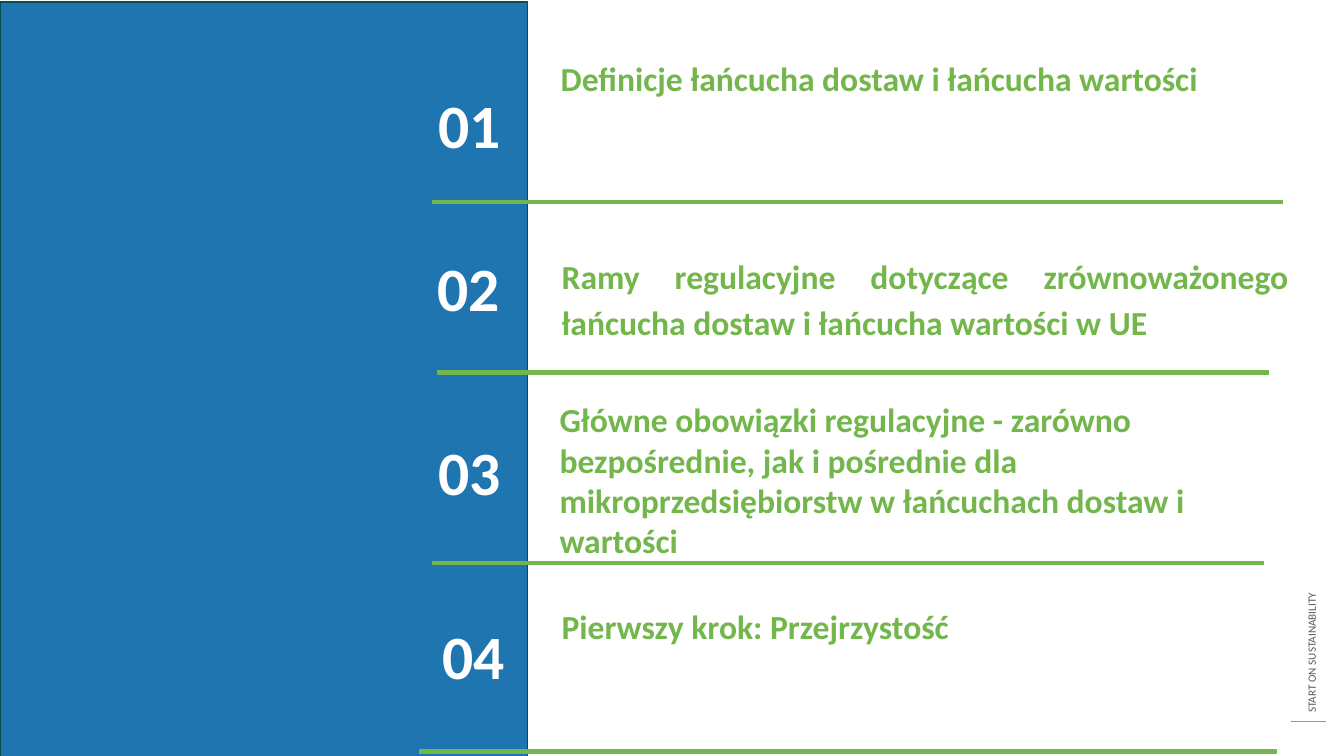
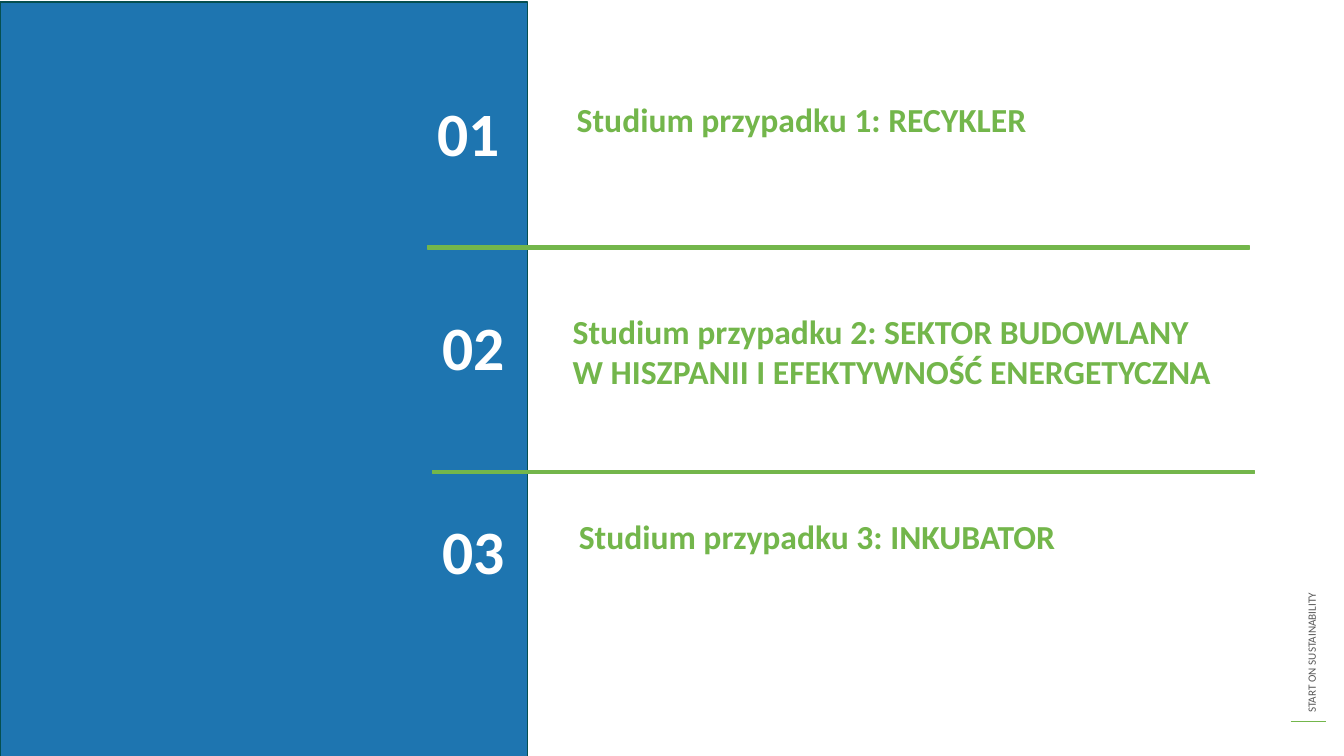
from dataclasses import dataclass

from lxml import etree
from pptx import Presentation
from pptx.dml.color import RGBColor
from pptx.enum.shapes import MSO_CONNECTOR, MSO_SHAPE
from pptx.enum.text import MSO_ANCHOR, MSO_AUTO_SIZE, PP_ALIGN
from pptx.oxml.ns import qn
from pptx.util import Pt

RECTANGLE = MSO_SHAPE.RECTANGLE
STRAIGHT = MSO_CONNECTOR.STRAIGHT
TOP = MSO_ANCHOR.TOP
NO_AUTOFIT = MSO_AUTO_SIZE.NONE
LEFT, JUSTIFY = PP_ALIGN.LEFT, PP_ALIGN.JUSTIFY

PX = 9144  # EMU per px, 100 px to the inch
COMPARISON_LAYOUT = 3 + 1
FIRST_FOOTER_INDEX = 10


@dataclass(frozen=True)
class Theme:
    font: str = "Calibri"
    green: RGBColor = RGBColor(0x73, 0xB6, 0x4B)
    blue: RGBColor = RGBColor(0x1E, 0x75, 0xB0)
    teal: RGBColor = RGBColor(0x05, 0x4F, 0x50)
    gray: RGBColor = RGBColor(0x59, 0x59, 0x59)
    white: RGBColor = RGBColor(0xFF, 0xFF, 0xFF)
    number_size: int = 44
    heading_size: int = 24
    label_size: int = 8
    line_width: int = 1


THEME = Theme()

# Each row: number, number (left, top), heading, heading (left, top, width, height),
# heading line spacing, alignment. Each rule: left, top, width.
AGENDAS = [
    {
        "rows": [
            ("01", (425, 59), "Definicje łańcucha dostaw i łańcucha wartości",
             (546, 52, 701, 122), 1.0, LEFT),
            ("02", (424, 221),
             "Ramy regulacyjne dotyczące zrównoważonego łańcucha dostaw "
             "i łańcucha wartości w UE",
             (547, 243, 741, 88), 1.15, JUSTIFY),
            ("03", (425, 404),
             "Główne obowiązki regulacyjne - zarówno bezpośrednie, jak i pośrednie "
             "dla mikroprzedsiębiorstw w łańcuchach dostaw i wartości",
             (545, 391, 745, 122), 1.0, LEFT),
            ("04", (429, 586), "Pierwszy krok: Przejrzystość",
             (547, 590, 772, 88), 1.15, LEFT),
        ],
        "rules": [(429, 199, 843), (434, 368, 824), (429, 557, 824), (416, 744, 850)],
    },
    {
        "rows": [
            ("01", (424, 67), "Studium przypadku 1: RECYKLER",
             (562, 93, 693, 50), 1.0, LEFT),
            ("02", (429, 280),
             "Studium przypadku 2: SEKTOR BUDOWLANY "
             "W HISZPANII I EFEKTYWNOŚĆ ENERGETYCZNA",
             (558, 303, 660, 90), 1.0, LEFT),
            ("03", (429, 482), "Studium przypadku 3: INKUBATOR",
             (564, 507, 693, 50), 1.0, LEFT),
        ],
        "rules": [(424, 244, 815), (429, 467, 815)],
    },
]


def write(shape, text, *, size, color, bold=False, spacing=1.0, align=LEFT):
    frame = shape.text_frame
    frame.word_wrap = True
    frame.auto_size = NO_AUTOFIT
    frame.vertical_anchor = TOP
    paragraph = frame.paragraphs[0]
    paragraph.alignment = align
    paragraph.line_spacing = spacing
    paragraph.space_before = Pt(0)
    properties = paragraph._p.get_or_add_pPr()
    properties.set("marL", "0")
    properties.set("indent", "0")
    etree.SubElement(properties, qn("a:buNone"))
    run = paragraph.add_run()
    run.text = text
    run.font.name = THEME.font
    run.font.size = Pt(size)
    run.font.bold = bold
    run.font.color.rgb = color


def add_rectangle(slide, left, top, width, height, fill, outline):
    shape = slide.shapes.add_shape(
        RECTANGLE, left * PX, top * PX, width * PX, height * PX)
    shape.shadow.inherit = False
    shape.fill.solid()
    shape.fill.fore_color.rgb = fill
    shape.line.color.rgb = outline
    shape.line.width = Pt(THEME.line_width)
    return shape


presentation = Presentation()
presentation.slide_width = 1333 * PX
presentation.slide_height = 750 * PX

layout = presentation.slide_layouts[COMPARISON_LAYOUT]
for placeholder in list(layout.placeholders):
    if placeholder.placeholder_format.idx >= FIRST_FOOTER_INDEX:
        layout.shapes.element.remove(placeholder.element)

slides = [presentation.slides.add_slide(layout) for agenda in AGENDAS]

# Shared parts are drawn on the first slide, then moved to the layout.
first_slide = slides[0]
side_label = first_slide.shapes.add_textbox(1078 * PX, 482 * PX, 446 * PX, 24 * PX)
side_label.rotation = 270
write(side_label, "START ON SUSTAINABILITY", size=THEME.label_size, color=THEME.gray)

side_line = first_slide.shapes.add_connector(
    STRAIGHT, 1280 * PX, 716 * PX, 1315 * PX, 716 * PX)
side_line.line.color.rgb = THEME.green
side_line.line.width = Pt(THEME.line_width)
etree.SubElement(side_line.element.spPr, qn("a:effectLst"))

panel = add_rectangle(first_slide, 0, 2, 523, 750, THEME.blue, THEME.teal)
for shared_shape in (side_label, side_line, panel):
    layout.shapes.element.append(shared_shape.element)

for slide, agenda in zip(slides, AGENDAS):
    slide.shapes.element.remove(slide.shapes.title.element)
    headings = list(slide.placeholders)
    rows = agenda["rows"]

    for heading, row in zip(headings, rows):
        number, (number_left, number_top), text, box, spacing, align = row
        heading.left, heading.top, heading.width, heading.height = (
            length * PX for length in box)
        write(heading, text, size=THEME.heading_size, color=THEME.green,
              bold=True, spacing=spacing, align=align)
        number_box = slide.shapes.add_textbox(
            number_left * PX, number_top * PX, 92 * PX, 104 * PX)
        write(number_box, number, size=THEME.number_size, color=THEME.white,
              bold=True, spacing=1.3)

    for unused in headings[len(rows):]:
        slide.shapes.element.remove(unused.element)

    for left, top, width in agenda["rules"]:
        add_rectangle(slide, left, top, width, 3, THEME.green, THEME.green)

presentation.save("out.pptx")
